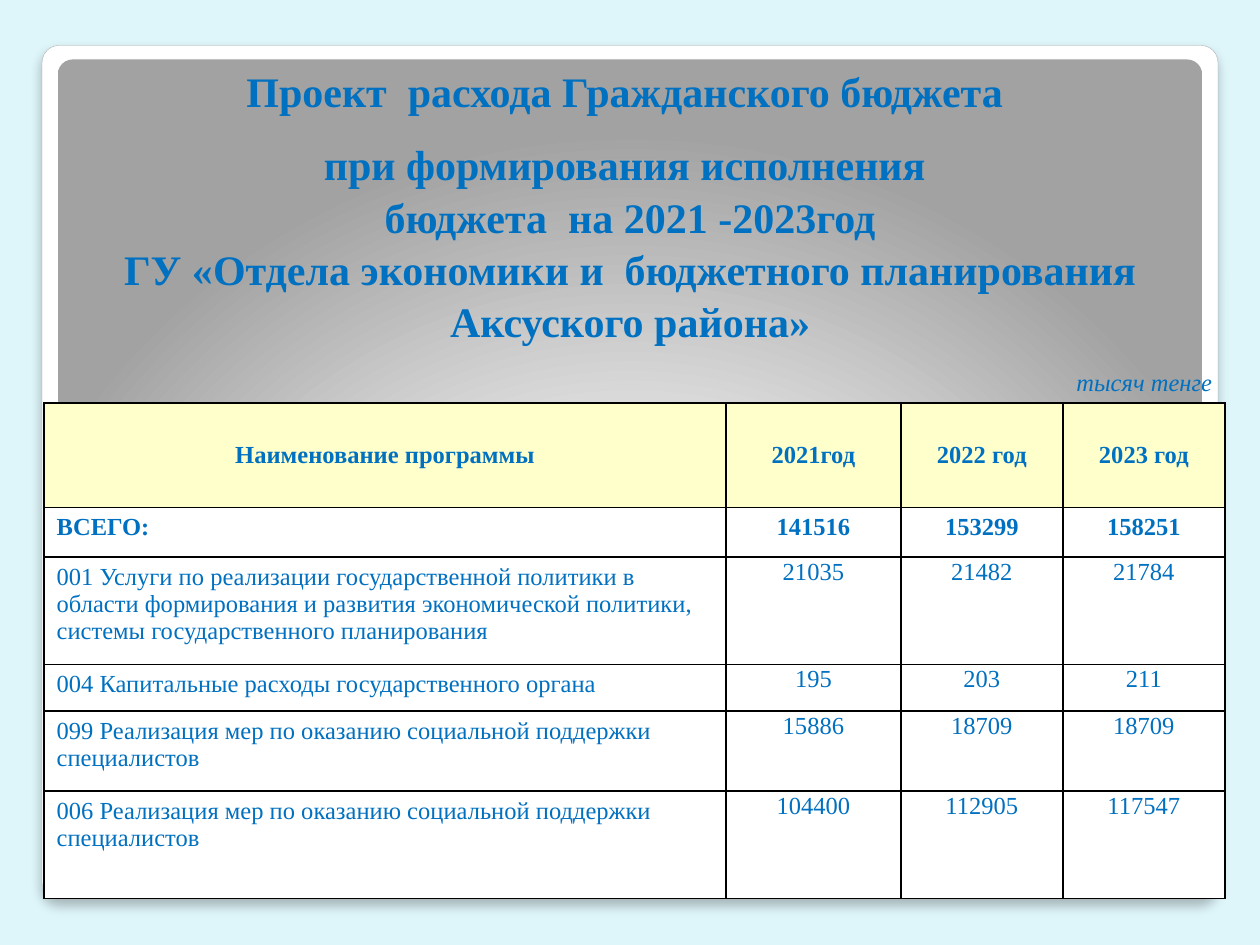
"""Build a budget slide with a framed title and a table of programme costs."""
from copy import deepcopy

from pptx import Presentation
from pptx import oxml
from pptx import util as u
from pptx.dml.color import RGBColor
from pptx.enum import shapes, text
from pptx.oxml import ns

Pt = u.Pt
SKY = RGBColor(0xDE, 0xF5, 0xFA)
BLUE = RGBColor(0x00, 0x70, 0xC0)
CREAM = RGBColor(0xFF, 0xFF, 0xCC)
WHITE = RGBColor(0xFF, 0xFF, 0xFF)
GRAY = RGBColor(0xA4, 0xA4, 0xA4)
BLACK = RGBColor(0x00, 0x00, 0x00)
CENTER = text.PP_ALIGN.CENTER


def write(paragraph, content, size=14, bold=False, italic=False, align=CENTER):
    paragraph.text = content
    paragraph.alignment = align
    for run in paragraph.runs:
        run.font.name = "Times New Roman"
        run.font.size = Pt(size)
        run.font.bold = bold
        run.font.italic = italic
        run.font.color.rgb = BLUE
    for line_break in paragraph._p.findall(ns.qn("a:br")):
        line_break.insert(0, deepcopy(paragraph.runs[0]._r.rPr))


def add_panel(slide, left, top, width, height, stops, direction):
    shape = slide.shapes.add_shape(
        shapes.MSO_SHAPE.ROUNDED_RECTANGLE, Pt(left), Pt(top), Pt(width), Pt(height))
    shape.adjustments[0] = 0.02
    shape.shadow.inherit = False
    shape.line.fill.background()
    shape.fill.background()
    stop_xml = "".join(
        f'<a:gs pos="{place * 1000}"><a:srgbClr val="{color}"/></a:gs>'
        for place, color in stops)
    properties = shape._element.spPr
    properties.replace(properties.find(ns.qn("a:noFill")), oxml.parse_xml(
        f'<a:gradFill {ns.nsdecls("a")}><a:gsLst>{stop_xml}</a:gsLst>{direction}</a:gradFill>'))
    return shape


presentation = Presentation()
presentation.slide_width, presentation.slide_height = Pt(720), Pt(540)
slide = presentation.slides.add_slide(presentation.slide_layouts[5])
slide.background.fill.solid()
slide.background.fill.fore_color.rgb = SKY

frame = add_panel(
    slide, 24, 26, 672, 488,
    [(0, "FFFFFF"), (98, "FFFFFF"), (99, "F7F7F7"), (100, "DADADA")],
    '<a:lin ang="5400000" scaled="0"/>')
frame.line.color.rgb = GRAY
frame.line.width = Pt(0.16)
frame._element.spPr.find(ns.qn("a:effectLst")).append(oxml.parse_xml(
    f'<a:outerShdw {ns.nsdecls("a")} blurRad="{Pt(6)}" dist="{Pt(4)}" dir="5400000">'
    '<a:srgbClr val="000000"><a:alpha val="25000"/></a:srgbClr></a:outerShdw>'))
add_panel(
    slide, 33, 34, 654, 432, [(0, "FFFFFF"), (55, "E1E1E1"), (100, "A2A2A2")],
    '<a:path path="circle">'
    '<a:fillToRect l="50000" t="175000" r="50000" b="-75000"/></a:path>')

rows = [
    ("", "", "тысяч тенге", ""),
    ("Наименование программы", "2021год", "2022 год", "2023 год"),
    ("ВСЕГО:", "141516", "153299", "158251"),
    ("001 Услуги по реализации государственной политики в области формирования и "
     "развития экономической политики, системы государственного планирования",
     "21035", "21482", "21784"),
    ("004 Капитальные расходы государственного органа", "195", "203", "211"),
    ("099 Реализация мер по оказанию социальной поддержки специалистов",
     "15886", "18709", "18709"),
    ("006 Реализация мер по оказанию социальной поддержки специалистов",
     "104400", "112905", "117547"),
]
column_widths = [389.7, 99.9, 92.6, 92.6]
row_heights = [45.4, 59.6, 28.4, 61.4, 26.6, 45.7, 61.4]
table = slide.shapes.add_table(
    len(rows), len(column_widths), Pt(25.2), Pt(185), Pt(sum(column_widths)),
    Pt(sum(row_heights))).table
table.first_row = table.horz_banding = False
for column, width in zip(table.columns, column_widths):
    column.width = Pt(width)
for row, height in zip(table.rows, row_heights):
    row.height = Pt(height)
table.cell(0, 2).merge(table.cell(0, 3))

for row_index, values in enumerate(rows):
    for column_index, value in enumerate(values):
        cell = table.cell(row_index, column_index)
        if row_index == 0:
            cell.fill.background()
        else:
            cell.fill.solid()
            cell.fill.fore_color.rgb = CREAM if row_index == 1 else WHITE
        if row_index == 0:
            cell.vertical_anchor = text.MSO_ANCHOR.BOTTOM
        elif row_index == 1:
            cell.vertical_anchor = text.MSO_ANCHOR.MIDDLE
        if row_index > 2 and column_index > 0:
            cell.margin_left = cell.margin_right = cell.margin_top = Pt(0.75)
            cell.margin_bottom = 0
        if value:
            align = CENTER
            if row_index == 0:
                align = text.PP_ALIGN.RIGHT
            elif row_index > 1 and column_index == 0:
                align = text.PP_ALIGN.LEFT
            write(cell.text_frame.paragraphs[0], value, bold=row_index in (1, 2),
                  italic=row_index == 0, align=align)
        for position, side in enumerate("LRTB"):
            visible = row_index > 0 or side == "B"
            paint = (f'<a:solidFill><a:srgbClr val="{BLACK}"/></a:solidFill>'
                     if visible else "<a:noFill/>")
            cell._tc.get_or_add_tcPr().insert(position, oxml.parse_xml(
                f'<a:ln{side} {ns.nsdecls("a")} w="{Pt(1)}">{paint}</a:ln{side}>'))

title = slide.shapes.title
title.left, title.top, title.width, title.height = Pt(34), Pt(37.5), Pt(652), Pt(164)
slide.shapes._spTree.append(title._element)
title_frame = title.text_frame
title_frame.word_wrap = True
title_frame.auto_size = text.MSO_AUTO_SIZE.NONE
title_frame.vertical_anchor = text.MSO_ANCHOR.BOTTOM
write(title_frame.paragraphs[0], "Проект  расхода Гражданского бюджета ", size=24, bold=True)
subtitle = title_frame.add_paragraph()
write(subtitle, "при формирования исполнения \nбюджета  на 2021 -2023год\n"
      "ГУ «Отдела экономики и  бюджетного планирования Аксуского района»",
      size=24, bold=True)
subtitle.space_before = Pt(12)
for paragraph in title_frame.paragraphs:
    paragraph.line_spacing = 1.04

presentation.save("out.pptx")
